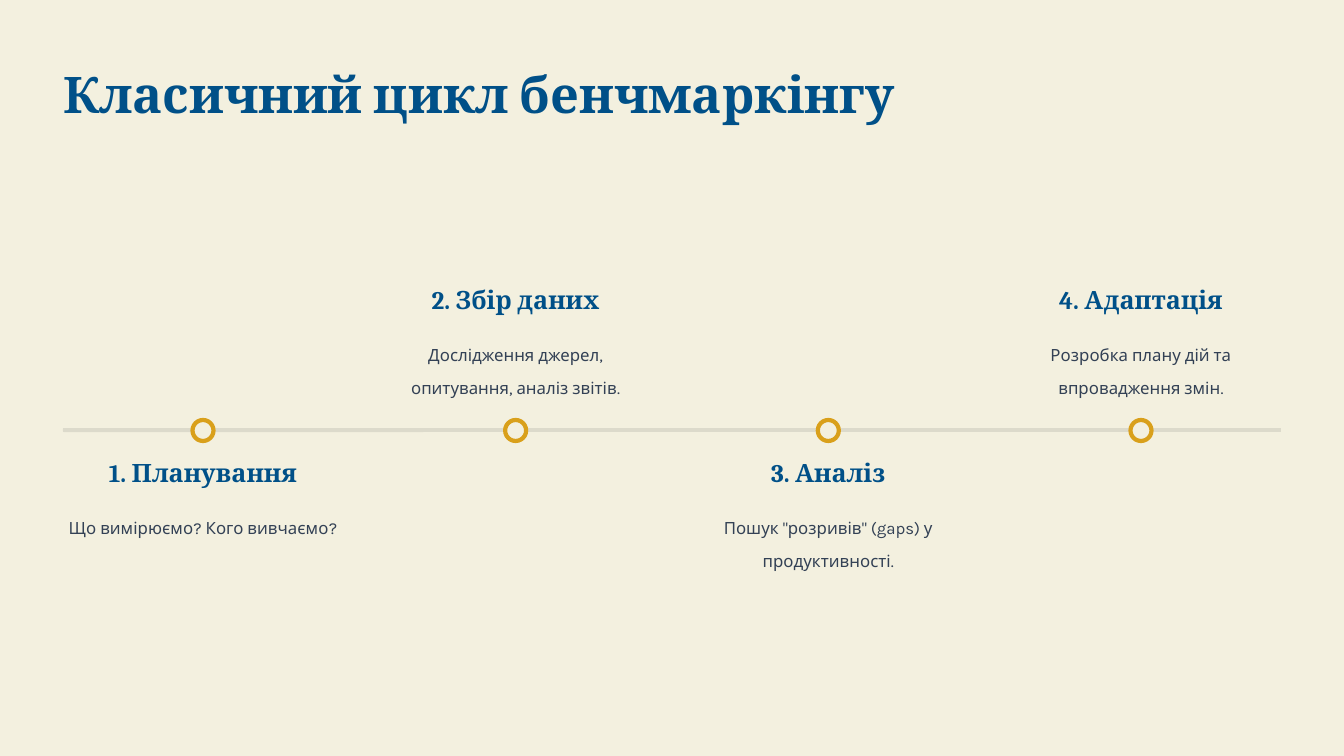
"""Build a one-slide timeline of the classic benchmarking cycle."""
from dataclasses import dataclass

from pptx import Presentation
from pptx.dml.color import RGBColor
from pptx.enum.shapes import MSO_SHAPE as Preset
from pptx.enum.text import MSO_AUTO_SIZE as AutoSize, PP_ALIGN as Align
from pptx.util import Emu, Pt

TITLE = "Класичний цикл бенчмаркінгу"
STEPS = [
    ("1. Планування", "Що вимірюємо? Кого вивчаємо?", 27),
    ("2. Збір даних", "Дослідження джерел, опитування, аналіз звітів.", 53),
    ("3. Аналіз", 'Пошук "розривів" (gaps) у продуктивності.', 53),
    ("4. Адаптація", "Розробка плану дій та впровадження змін.", 53),
]

EMU_PER_PX = 914400 / 100.8
SLIDE_W, SLIDE_H = 1344, 756
MARGIN = 63
RAIL_W = SLIDE_W - 2 * MARGIN
RAIL_TOP, RAIL_H = 428, 4
COLUMN_W = 280
HEADING_W, HEADING_H = 294, 32
HEADING_TOPS = (457, 284)
DETAIL_OFFSET = 49
MARKER_TOP, MARKER_SIZE = 420, 21


@dataclass(frozen=True)
class Theme:
    paper: str = "F3F0DF"
    rail: str = "DCDACB"
    heading: str = "005088"
    detail: str = "334155"
    marker: str = "D9A01B"
    heading_font: str = "Cambria"
    detail_font: str = "Karla"
    title_size: int = 36
    heading_size: int = 18
    detail_size: int = 12
    marker_line: int = 3


THEME = Theme()


def color(value):
    return RGBColor.from_string(value)


def place(left, top, width, height):
    return [Emu(round(length * EMU_PER_PX)) for length in (left, top, width, height)]


def add_pill(page, bounds, fill, rounding, outline=None):
    pill = page.shapes.add_shape(Preset.ROUNDED_RECTANGLE, *place(*bounds))
    pill.adjustments[0] = rounding
    pill.shadow.inherit = False
    pill.fill.solid()
    pill.fill.fore_color.rgb = color(fill)
    if outline:
        pill.line.color.rgb = color(outline)
        pill.line.width = Pt(THEME.marker_line)
    else:
        pill.line.fill.background()


def add_text(page, bounds, text, size, align, heading=True):
    frame = page.shapes.add_textbox(*place(*bounds)).text_frame
    frame.word_wrap = True
    frame.auto_size = AutoSize.SHAPE_TO_FIT_TEXT
    frame.margin_left = frame.margin_top = frame.margin_right = frame.margin_bottom = 0
    para = frame.paragraphs[0]
    para.alignment = align
    if not heading:
        para.line_spacing = 1.6
    span = para.add_run()
    span.text = text
    span.font.size = Pt(size)
    span.font.bold = heading
    span.font.name = THEME.heading_font if heading else THEME.detail_font
    span.font.color.rgb = color(THEME.heading if heading else THEME.detail)


def add_step(page, index, heading, detail, detail_height):
    pitch = (RAIL_W - COLUMN_W) / (len(STEPS) - 1)
    left = MARGIN + index * pitch
    center = left + COLUMN_W / 2
    top = HEADING_TOPS[index % 2]
    add_text(page, (center - HEADING_W / 2, top, HEADING_W, HEADING_H),
             heading, THEME.heading_size, Align.CENTER)
    add_text(page, (left, top + DETAIL_OFFSET, COLUMN_W, detail_height),
             detail, THEME.detail_size, Align.CENTER, heading=False)
    add_pill(page, (center - MARKER_SIZE / 2, MARKER_TOP, MARKER_SIZE, MARKER_SIZE),
             THEME.paper, 0.5, THEME.marker)


def main():
    deck = Presentation()
    deck.slide_width, deck.slide_height = place(0, 0, SLIDE_W, SLIDE_H)[2:]
    page = deck.slides.add_slide(deck.slide_layouts[6])
    page.background.fill.solid()
    page.background.fill.fore_color.rgb = color(THEME.paper)
    add_text(page, (MARGIN, MARGIN, SLIDE_W - MARGIN, 63),
             TITLE, THEME.title_size, Align.LEFT)
    add_pill(page, (MARGIN, RAIL_TOP, RAIL_W, RAIL_H), THEME.rail, 0.17)
    for index, step in enumerate(STEPS):
        add_step(page, index, *step)
    deck.save("out.pptx")


if __name__ == "__main__":
    main()
